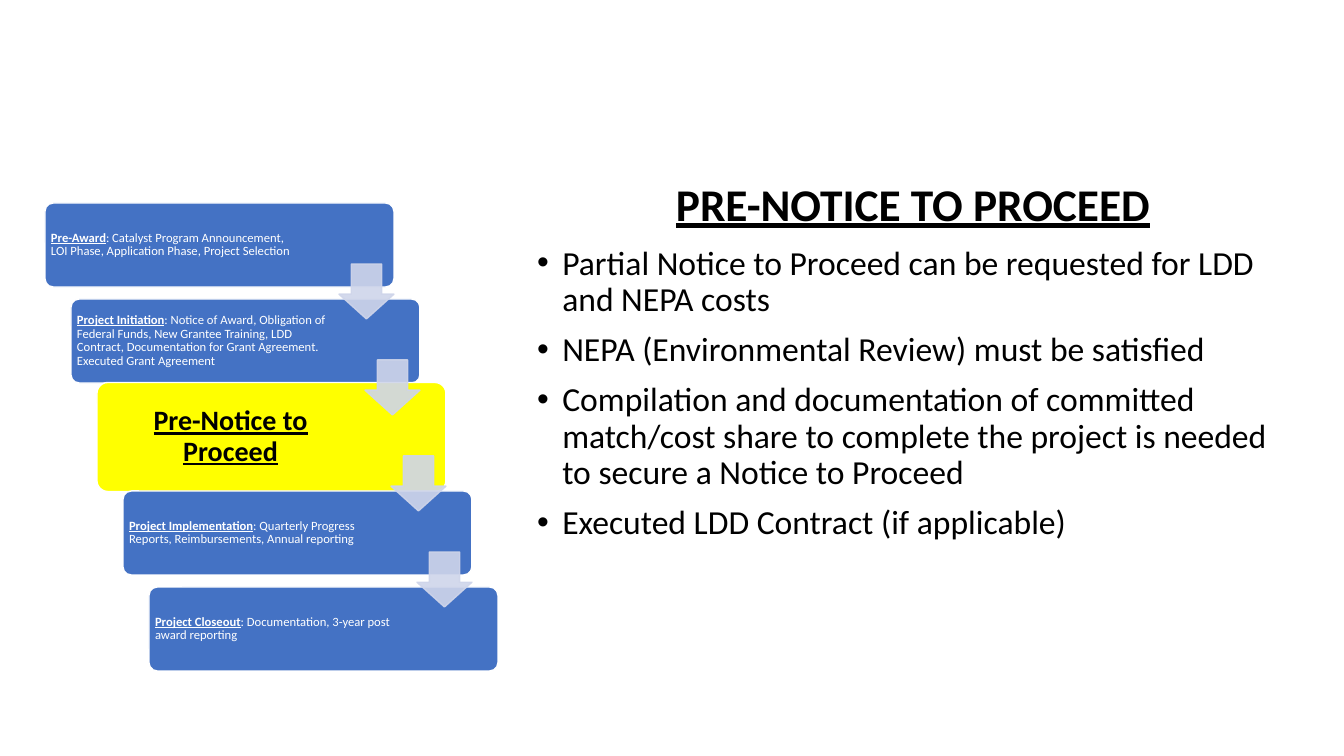
"""Build the Pre-Notice to Proceed slide with its grant process staircase."""
from lxml.etree import SubElement
from pptx import Presentation
from pptx.dml.color import RGBColor
from pptx.enum.shapes import MSO_SHAPE
from pptx.enum.text import MSO_ANCHOR, MSO_AUTO_SIZE, PP_ALIGN
from pptx.oxml.ns import qn
from pptx.util import Emu, Pt

TITLE = "PRE-NOTICE TO PROCEED"
BULLETS = [
    "Partial Notice to Proceed can be requested for LDD and NEPA costs",
    "NEPA (Environmental Review) must be satisfied",
    "Compilation and documentation of committed match/cost share to complete "
    "the project is needed to secure a Notice to Proceed",
    "Executed LDD Contract (if applicable)",
]
STEPS = [
    ("Pre-Award", ": Catalyst Program Announcement, LOI Phase, Application Phase, "
     "Project Selection", "normal", 248),
    ("Project Initiation", ": Notice of Award, Obligation of Federal Funds, "
     "New Grantee Training, LDD Contract, Documentation for Grant Agreement. "
     "Executed Grant Agreement", "normal", 263),
    ("Pre-Notice to Proceed", "", "current", 261),
    ("Project Implementation", ": Quarterly Progress Reports, Reimbursements, "
     "Annual reporting", "normal", 263),
    ("Project Closeout", ": Documentation, 3-year post award reporting", "normal", 263),
]
COLORS = {"step": "4472C4", "current": "FFFF00", "arrow": "CFD5EA",
          "light": "FFFFFF", "dark": "000000"}
STYLES = {
    "normal": dict(height=84, fill="step", text="light", size=9,
                   offset=2, inset=4, align=PP_ALIGN.LEFT, after=3),
    "current": dict(height=109, fill="current", text="dark", size=20,
                    offset=3, inset=8, align=PP_ALIGN.CENTER, after=7),
}
FONT = "Calibri"
SLIDE_WIDTH, SLIDE_HEIGHT = 1344, 756
STEP_LEFT, STEP_CENTER, STEP_WIDTH = 45, 245, 349
SHIFT_RIGHT, SHIFT_DOWN = 26, 96
ARROW_LEFT, ARROW_TOP, ARROW_SIZE = 339, 264, 55


def px(length):
    return Emu(round(length * 914400 / 100.8))


def color(name):
    return RGBColor.from_string(COLORS[name])


def place(shape, left, top, width, height):
    shape.left, shape.top = px(left), px(top)
    shape.width, shape.height = px(width), px(height)


def set_font(run, size, color_name, strong=False):
    run.font.name, run.font.size = FONT, Pt(size)
    run.font.color.rgb = color(color_name)
    run.font.bold = run.font.underline = strong


def add_shape(slide, kind, box, fill, line, adjustments):
    shape = slide.shapes.add_shape(kind, *map(px, box))
    shape.shadow.inherit = False
    shape.fill.solid()
    shape.fill.fore_color.rgb = color(fill)
    shape.line.color.rgb = color(line)
    shape.line.width = Pt(1)
    for index, value in enumerate(adjustments):
        shape.adjustments[index] = value
    return shape


def fill_title(title):
    place(title, 527, 83, 772, 148)
    frame = title.text_frame
    frame.text = TITLE
    frame.auto_size = MSO_AUTO_SIZE.NONE
    frame.vertical_anchor = MSO_ANCHOR.BOTTOM
    frame.margin_bottom = 0
    paragraph = frame.paragraphs[0]
    paragraph.alignment = PP_ALIGN.CENTER
    paragraph.line_spacing = 0.9
    set_font(paragraph.runs[0], 32.4, "dark", strong=True)


def fill_body(body):
    place(body, 527, 241, 772, 405)
    frame = body.text_frame
    frame.text = "\n".join(BULLETS)
    frame.auto_size = MSO_AUTO_SIZE.NONE
    for index, paragraph in enumerate(frame.paragraphs):
        properties = paragraph._p.get_or_add_pPr()
        properties.set("marL", "228600")
        properties.set("indent", "-228600")
        paragraph.line_spacing = 0.9
        paragraph.space_before = Pt(10 if index else 0)
        SubElement(properties, qn("a:buFont"), typeface="Arial")
        SubElement(properties, qn("a:buChar"), char="•")
        set_font(paragraph.runs[0], 24, "dark")


def add_step(slide, index, name, details, style_name, text_width):
    style = STYLES[style_name]
    offset, height = style["offset"], style["height"]
    left = STEP_LEFT + index * SHIFT_RIGHT
    top = STEP_CENTER + index * SHIFT_DOWN - height / 2
    add_shape(slide, MSO_SHAPE.ROUNDED_RECTANGLE, (left, top, STEP_WIDTH, height),
              style["fill"], "light", [0.1])
    text_box = (left + offset, top + offset, text_width, height - 2 * offset)
    frame = slide.shapes.add_textbox(*map(px, text_box)).text_frame
    frame.word_wrap = True
    frame.vertical_anchor = MSO_ANCHOR.MIDDLE
    frame.margin_left = frame.margin_right = px(style["inset"])
    frame.margin_top = frame.margin_bottom = px(style["inset"])
    paragraph = frame.paragraphs[0]
    paragraph.alignment = style["align"]
    paragraph.line_spacing = 0.9
    paragraph.space_after = Pt(style["after"])
    for text, strong in ((name, True), (details, False)):
        if text:
            run = paragraph.add_run()
            run.text = text
            set_font(run, style["size"], style["text"], strong)


def add_arrow(slide, index):
    box = (ARROW_LEFT + index * SHIFT_RIGHT, ARROW_TOP + index * SHIFT_DOWN,
           ARROW_SIZE, ARROW_SIZE)
    arrow = add_shape(slide, MSO_SHAPE.DOWN_ARROW, box, "arrow", "arrow", [0.55, 0.45])
    for tint in arrow._element.spPr.iter(qn("a:srgbClr")):
        SubElement(tint, qn("a:alpha"), val="90000")


def main():
    presentation = Presentation()
    presentation.slide_width, presentation.slide_height = px(SLIDE_WIDTH), px(SLIDE_HEIGHT)
    slide = presentation.slides.add_slide(presentation.slide_layouts[1])
    fill_title(slide.shapes.title)
    fill_body(slide.placeholders[1])
    for index, step in enumerate(STEPS):
        add_step(slide, index, *step)
    for index in range(len(STEPS) - 1):
        add_arrow(slide, index)
    presentation.save("out.pptx")


if __name__ == "__main__":
    main()
